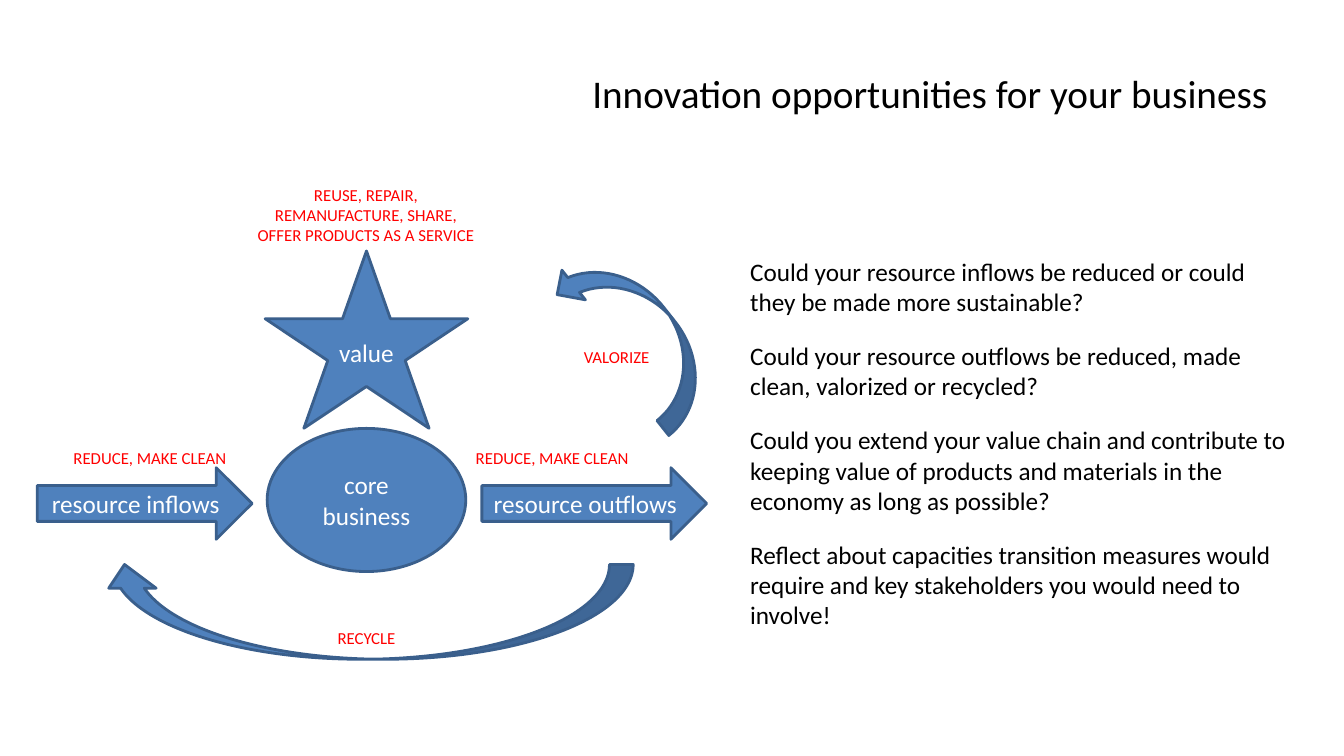
from lxml import etree
from pptx import Presentation
from pptx.dml.color import RGBColor
from pptx.enum.shapes import MSO_SHAPE
from pptx.enum.text import MSO_ANCHOR, MSO_AUTO_SIZE, PP_ALIGN
from pptx.oxml.ns import qn
from pptx.util import Inches, Pt

BLUE = RGBColor(0x4F, 0x81, 0xBD)
EDGE = RGBColor(0x3A, 0x5F, 0x8C)
RED = RGBColor(0xFF, 0x00, 0x00)
BLACK = RGBColor(0x00, 0x00, 0x00)
WHITE = RGBColor(0xFF, 0xFF, 0xFF)
LEFT, MID, RIGHT = PP_ALIGN.LEFT, PP_ALIGN.CENTER, PP_ALIGN.RIGHT
OVAL, STAR = MSO_SHAPE.OVAL, MSO_SHAPE.STAR_5_POINT
ARROW = MSO_SHAPE.RIGHT_ARROW
CURVE_UP, CURVE_DOWN = MSO_SHAPE.CURVED_UP_ARROW, MSO_SHAPE.CURVED_DOWN_ARROW
TOP, CENTER = MSO_ANCHOR.TOP, MSO_ANCHOR.MIDDLE
NO_FIT = MSO_AUTO_SIZE.NONE

SHAPES = [
    (OVAL, (2.65, 4.25, 1.97, 1.42), "core business", 0),
    (ARROW, (0.37, 4.64, 2.13, 0.71), "resource inflows", 0),
    (ARROW, (4.78, 4.64, 2.23, 0.71), "resource outflows", 0),
    (STAR, (2.63, 2.49, 2.01, 1.76), "value", 0),
    (CURVE_UP, (5.33, 2.94, 1.97, 0.75), "", 231.6),
    (CURVE_DOWN, (1, 5.6, 5.28, 0.94), "", 180),
]
LABELS = [
    ("REDUCE, MAKE CLEAN", (0.63, 4.39, 1.81, 0.3), LEFT),
    ("VALORIZE", (4.73, 3.39, 1.81, 0.3), RIGHT),
    ("RECYCLE", (2.73, 6.18, 1.81, 0.3), MID),
    ("REUSE, REPAIR, REMANUFACTURE, SHARE, OFFER PRODUCTS AS A SERVICE",
     (2.44, 1.78, 2.38, 0.71), MID),
    ("REDUCE, MAKE CLEAN", (4.62, 4.39, 1.81, 0.3), LEFT),
]
PROMPTS = [
    "Could your resource inflows be reduced or could they be made more sustainable?",
    "Could your resource outflows be reduced, made clean, valorized or recycled?",
    "Could you extend your value chain and contribute to keeping value of "
    "products and materials in the economy as long as possible?",
    "Reflect about capacities transition measures would require and key "
    "stakeholders you would need to involve!",
]


def style(para, size, color, align):
    para.alignment = align
    para.font.name = "Calibri"
    para.font.size = Pt(size)
    para.font.color.rgb = color


def place(holder, box, anchor):
    holder.left, holder.top, holder.width, holder.height = map(Inches, box)
    frame = holder.text_frame
    frame.auto_size = NO_FIT
    frame.word_wrap = True
    frame.vertical_anchor = anchor
    return frame


def add_title(slide, text, box):
    frame = place(slide.shapes.title, box, CENTER)
    frame.text = text
    style(frame.paragraphs[0], 28, BLACK, RIGHT)


def add_list(slide, items, box):
    frame = place(slide.placeholders[1], box, TOP)
    frame.text = "\n".join(items)
    for i, para in enumerate(frame.paragraphs):
        para.space_before = Pt(17 if i else 0)
        props = para._p.get_or_add_pPr()
        props.set("marL", "0")
        props.set("indent", "0")
        etree.SubElement(props, qn("a:buNone"))
        style(para, 18, BLACK, LEFT)


def add_form(slide, kind, box, text, turn):
    form = slide.shapes.add_shape(kind, *map(Inches, box))
    form.shadow.inherit = False
    form.rotation = turn
    form.fill.solid()
    form.fill.fore_color.rgb = BLUE
    form.line.color.rgb = EDGE
    form.line.width = Pt(2)
    if text:
        frame = form.text_frame
        frame.text = text
        frame.vertical_anchor = CENTER
        style(frame.paragraphs[0], 18, WHITE, MID)


def add_label(slide, text, box, align):
    frame = slide.shapes.add_textbox(*map(Inches, box)).text_frame
    frame.word_wrap = True
    frame.text = text
    style(frame.paragraphs[0], 12, RED, align)


def main():
    """Build the slide on innovation opportunities."""
    deck = Presentation()
    deck.slide_width, deck.slide_height = Inches(13.33), Inches(7.5)
    slide = deck.slides.add_slide(deck.slide_layouts[1])
    add_title(slide, "Innovation opportunities for your business",
              (4.07, 0.3, 8.6, 1.25))
    for kind, box, text, turn in SHAPES:
        add_form(slide, kind, box, text, turn)
    for text, box, align in LABELS:
        add_label(slide, text, box, align)
    add_list(slide, PROMPTS, (7.34, 2.49, 5.59, 3.84))
    deck.save("out.pptx")


if __name__ == "__main__":
    main()
